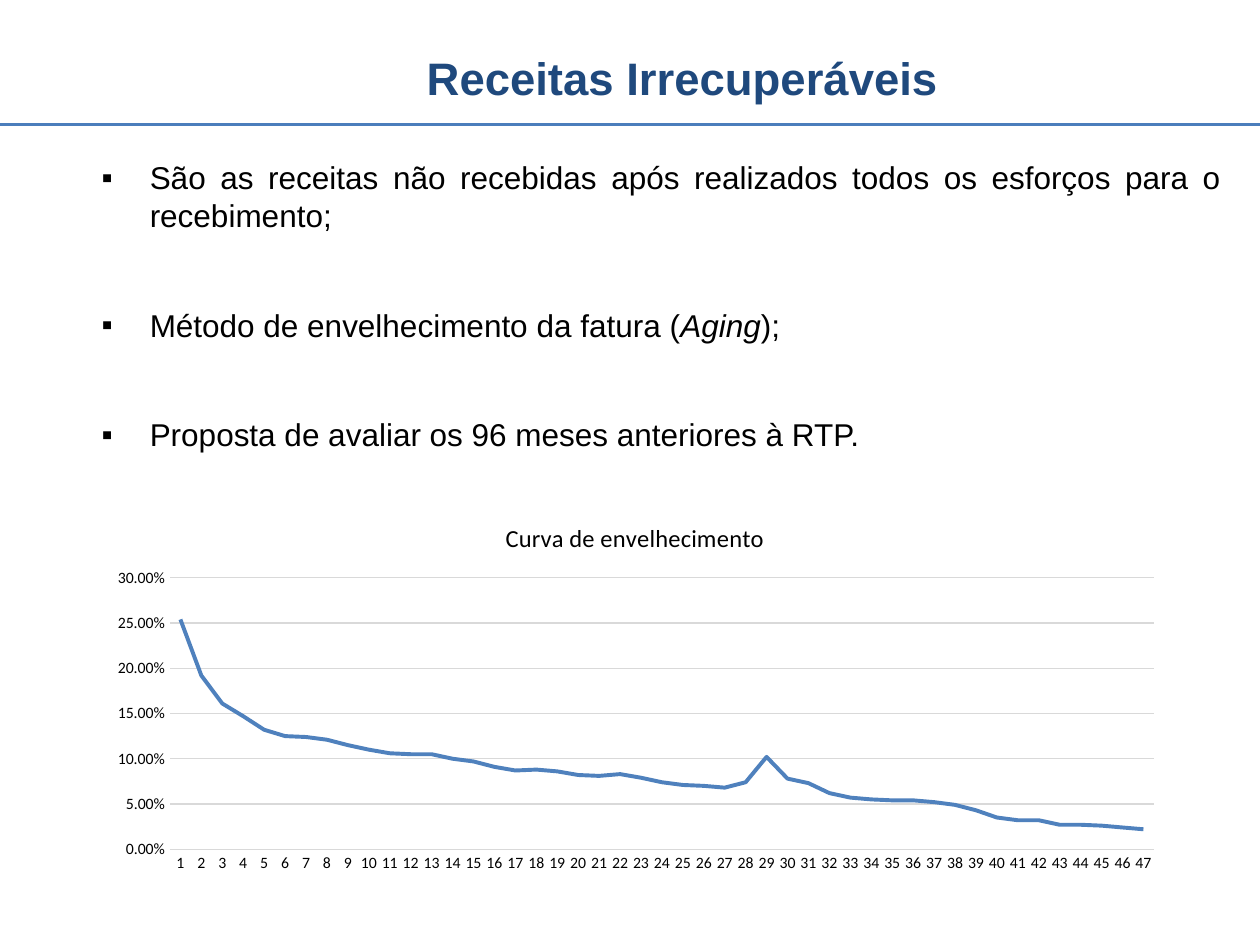
from dataclasses import dataclass

from lxml import etree
from pptx import Presentation
from pptx import util as u
from pptx.chart.data import CategoryChartData
from pptx.dml.color import RGBColor
from pptx.enum import chart as ch
from pptx.enum import text
from pptx.oxml import parse_xml
from pptx.oxml.ns import nsdecls, qn


@dataclass(frozen=True)
class Theme:
    title: RGBColor = RGBColor(0x1F, 0x49, 0x7D)
    rule: RGBColor = RGBColor(0x4B, 0x7E, 0xBC)
    curve: RGBColor = RGBColor(0x4F, 0x81, 0xBD)
    ink: RGBColor = RGBColor(0, 0, 0)
    grid: RGBColor = RGBColor(0xD9, 0xD9, 0xD9)
    body_font: str = "Arial"
    chart_font: str = "Calibri"
    title_size: int = 26
    body_size: int = 18
    chart_title_size: int = 14
    chart_size: int = 10
    axis_size: int = 9


THEME = Theme()

# Each bullet is a list of (words, italic) runs
BULLETS = [
    [("São as receitas não recebidas após realizados todos os esforços "
      "para o recebimento;", False)],
    [("Método de envelhecimento da fatura (", False), ("Aging", True),
     (");", False)],
    [("Proposta de avaliar os 96 meses anteriores à RTP.", False)],
]

# Share of unpaid invoices by month of age
AGING = [
    0.254, 0.192, 0.161, 0.147, 0.132, 0.125, 0.124, 0.121, 0.115, 0.11,
    0.106, 0.105, 0.105, 0.1, 0.097, 0.091, 0.087, 0.088, 0.086, 0.082,
    0.081, 0.083, 0.079, 0.074, 0.071, 0.07, 0.068, 0.074, 0.102, 0.078,
    0.073, 0.062, 0.057, 0.055, 0.054, 0.054, 0.052, 0.049, 0.043, 0.035,
    0.032, 0.032, 0.027, 0.027, 0.026, 0.024, 0.022,
]


def set_font(font, name, size, color, bold=False):
    font.name, font.size, font.bold = name, u.Pt(size), bold
    font.color.rgb = color


def add_text_frame(s, left, top, width, height):
    tf = s.shapes.add_textbox(left, top, width, height).text_frame
    tf.word_wrap = True
    return tf


def add_header(s, left, top, width, height):
    """Centred title above a rule along the bottom of the box."""
    bottom = top + height
    rule = s.shapes.add_connector(1, left, bottom, left + width, bottom)
    rule.line.color.rgb = THEME.rule
    rule.line.width = u.Pt(2)
    etree.SubElement(rule._element.spPr, qn("a:effectLst"))

    tf = add_text_frame(s, left + u.Cm(5.16), top + u.Cm(0.89),
                        u.Cm(17.2), u.Cm(1.37))
    tf.text = "Receitas Irrecuperáveis"
    p = tf.paragraphs[0]
    p.alignment = text.PP_ALIGN.CENTER
    set_font(p.runs[0].font, THEME.body_font, THEME.title_size, THEME.title,
             bold=True)


def add_bullet(p):
    pPr = p._p.get_or_add_pPr()
    pPr.set("marL", str(u.Cm(2.24)))
    pPr.set("indent", str(u.Cm(-0.97)))
    for tag, body in (("buClr", f'><a:srgbClr val="{THEME.ink}"/></a:buClr>'),
                      ("buFont", f' typeface="{THEME.body_font}"/>'),
                      ("buChar", ' char="▪"/>')):
        pPr.append(parse_xml(f"<a:{tag} {nsdecls('a')}{body}"))


def add_bullets(s, left, top, width, height):
    tf = add_text_frame(s, left, top, width, height)
    for i, parts in enumerate(BULLETS):
        p = tf.paragraphs[0] if i == 0 else tf.add_paragraph()
        p.alignment = text.PP_ALIGN.JUSTIFY
        p.space_after = u.Pt(41)
        add_bullet(p)
        for words, italic in parts:
            r = p.add_run()
            r.text = words
            set_font(r.font, THEME.body_font, THEME.body_size, THEME.ink)
            r.font.italic = italic


def set_plot_box(chart, **box):
    """Fix the inner plot area, in fractions of the chart."""
    plot_area = chart._chartSpace.chart.plotArea
    for old in plot_area.findall(qn("c:layout")):
        plot_area.remove(old)
    places = "".join(f'<c:{k} val="{v}"/>' for k, v in box.items())
    plot_area.insert(0, parse_xml(
        f'<c:layout {nsdecls("c")}><c:manualLayout>'
        '<c:layoutTarget val="inner"/><c:xMode val="edge"/>'
        f'<c:yMode val="edge"/>{places}</c:manualLayout></c:layout>'))


def add_aging_chart(s, left, top, width, height):
    data = CategoryChartData(number_format="0.00%")
    data.categories = [str(month) for month in range(1, len(AGING) + 1)]
    data.add_series("Series 1", AGING)
    chart = s.shapes.add_chart(ch.XL_CHART_TYPE.LINE, left, top, width,
                               height, data).chart
    set_font(chart.font, THEME.chart_font, THEME.chart_size, THEME.ink)
    chart.has_legend = False
    set_plot_box(chart, x=0.07, y=0.2, w=0.91, h=0.72)

    # Title
    tf = chart.chart_title.text_frame
    tf.text = "Curva de envelhecimento"
    set_font(tf.paragraphs[0].runs[0].font, THEME.chart_font,
             THEME.chart_title_size, THEME.ink)
    chart.chart_title.include_in_layout = False

    # Axes
    months, share = chart.category_axis, chart.value_axis
    for axis in (months, share):
        axis.major_tick_mark = axis.minor_tick_mark = ch.XL_TICK_MARK.NONE
        set_font(axis.tick_labels.font, THEME.chart_font, THEME.axis_size,
                 THEME.ink)
    share.minimum_scale, share.maximum_scale = 0, 0.3
    share.major_unit = 0.05
    share.tick_labels.number_format = "0.00%"
    share.tick_labels.number_format_is_linked = False
    share.format.line.fill.background()
    for line in (months.format.line, share.major_gridlines.format.line):
        line.color.rgb = THEME.grid
        line.width = u.Pt(0.75)

    # Curve
    chart.plots[0].vary_by_categories = False
    curve = chart.plots[0].series[0]
    curve.smooth = False
    curve.marker.style = ch.XL_MARKER_STYLE.NONE
    curve.format.line.color.rgb = THEME.curve
    curve.format.line.width = u.Pt(2.25)


def main():
    prs = Presentation()
    prs.slide_width, prs.slide_height = u.Cm(25.4), u.Cm(19.05)
    s = prs.slides.add_slide(prs.slide_layouts[6])
    add_header(s, 0, 0, prs.slide_width, u.Cm(2.51))
    add_bullets(s, u.Cm(0.53), u.Cm(3.07), u.Cm(24.33), u.Cm(6.15))
    add_aging_chart(s, u.Cm(1.9), u.Cm(10.13), u.Cm(21.8), u.Cm(7.6))
    prs.save("out.pptx")


if __name__ == "__main__":
    main()
